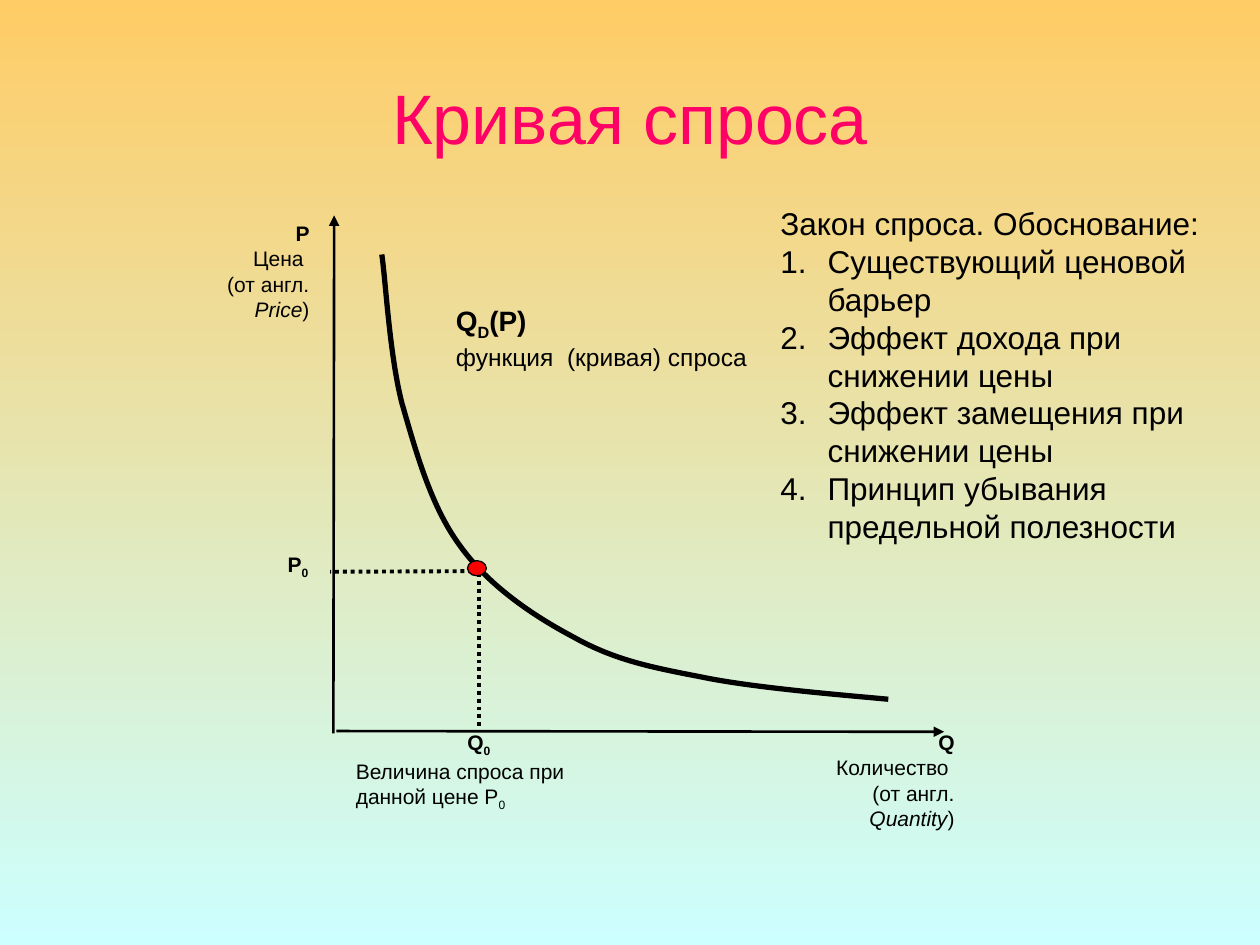
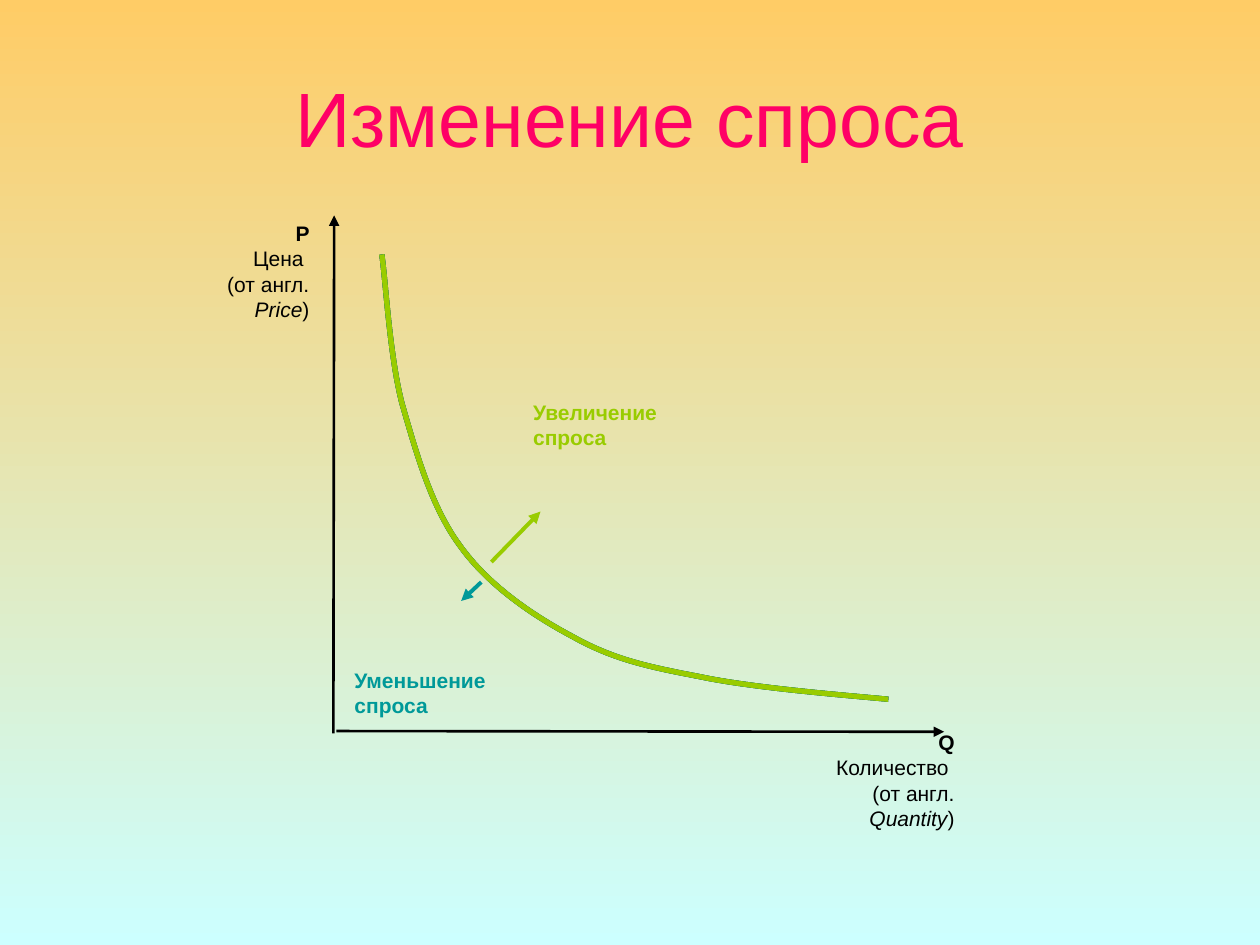
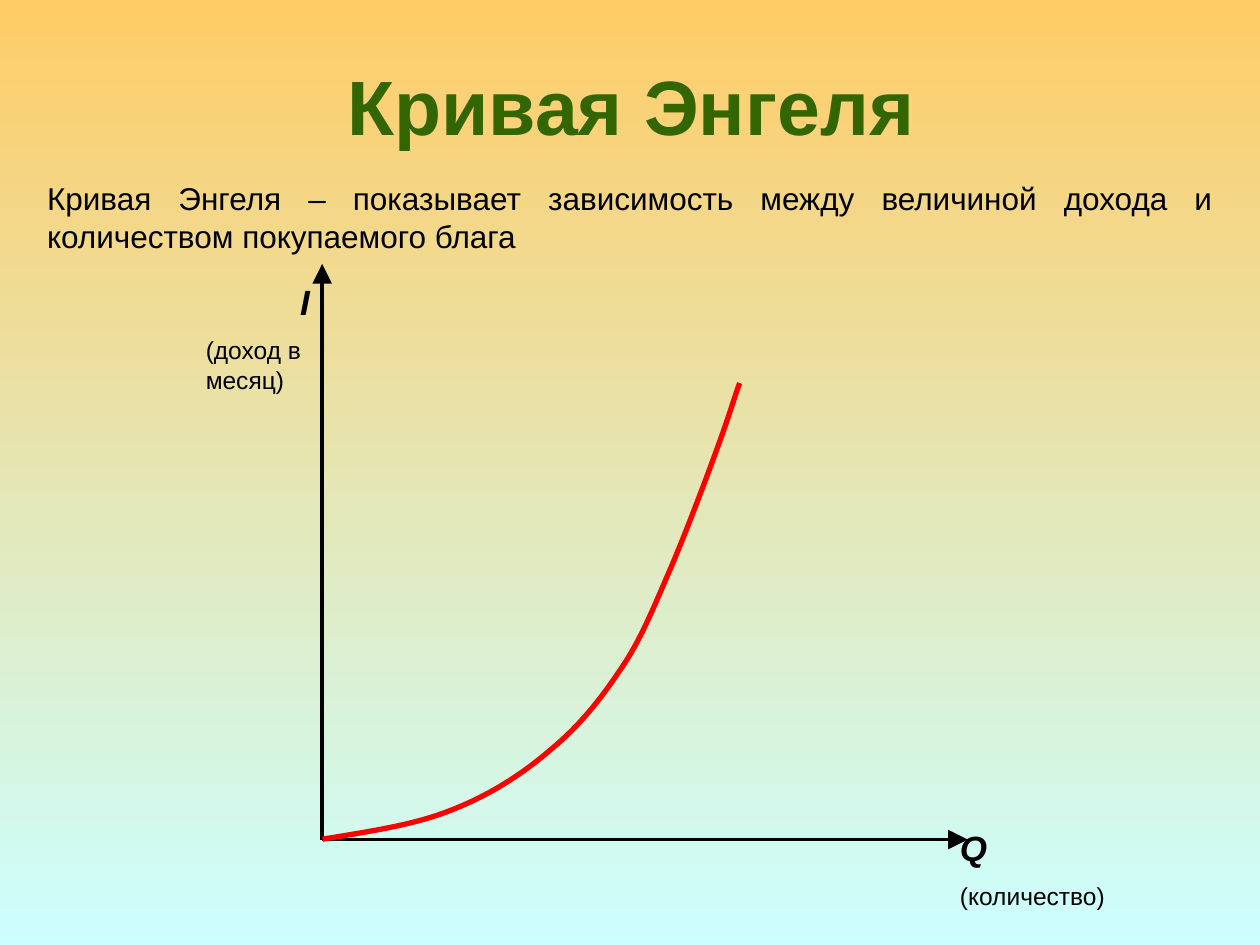
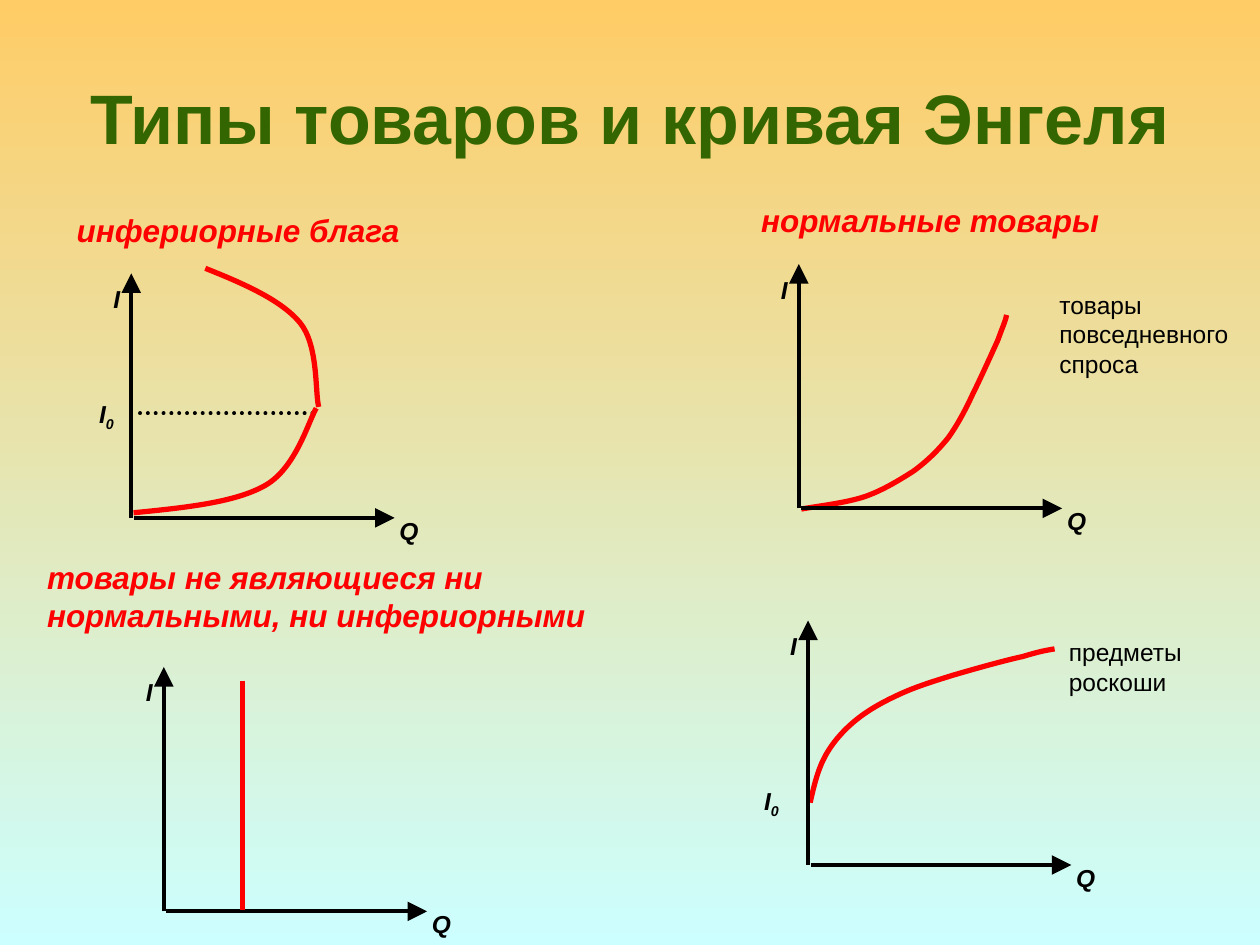
from dataclasses import dataclass
from typing import Any, NamedTuple, Optional

from lxml.etree import SubElement
from pptx import Presentation
from pptx.dml.color import RGBColor as Color
from pptx.enum.dml import MSO_LINE as Dash
from pptx.enum.shapes import MSO_CONNECTOR as Connector, MSO_SHAPE as Preset
from pptx.enum.text import MSO_ANCHOR as Anchor, MSO_AUTO_SIZE as AutoSize, PP_ALIGN as Align
from pptx.oxml.ns import qn
from pptx.util import Inches, Pt

SLIDE_WIDTH, SLIDE_HEIGHT = Inches(10), Inches(7.5)
COLUMNS, ROWS = 100, 75
COLUMN, ROW = SLIDE_WIDTH // COLUMNS, SLIDE_HEIGHT // ROWS


@dataclass(frozen=True)
class Theme:
    font: str = "Arial"
    sky: Color = Color(0xFF, 0xCC, 0x66)
    ground: Color = Color(0xCC, 0xFF, 0xFF)
    ink: Color = Color(0, 0, 0)
    pink: Color = Color(0xFF, 0x00, 0x66)
    green: Color = Color(0x33, 0x66, 0x00)
    red: Color = Color(0xFF, 0, 0)
    teal: Color = Color(0, 0x99, 0x99)
    lime: Color = Color(0x99, 0xCC, 0x00)
    large_title: int = 44
    title: int = 40
    symbol: int = 20
    body: int = 18
    function: int = 16
    note: int = 14
    label: int = 12
    hairline: float = 0.75
    thin: float = 1.5
    medium: float = 2.25
    thick: float = 3


THEME = Theme()


class Point(NamedTuple):
    column: float
    row: float


class Box(NamedTuple):
    column: float
    row: float
    width: float
    height: float


class Style(NamedTuple):
    size: int
    color: Color = THEME.ink
    bold: bool = False
    italic: bool = False


class Run(NamedTuple):
    text: str
    style: Style
    subscript: bool = False


@dataclass(frozen=True)
class TextLine:
    runs: tuple[Run, ...]
    align: Align = Align.LEFT
    before: float = 0
    numbered: bool = False


@dataclass(frozen=True)
class TextBlock:
    box: Box
    lines: tuple[TextLine, ...]
    grow: bool = True
    wrap: bool = True
    anchor: Anchor = Anchor.TOP


@dataclass(frozen=True)
class Stroke:
    width: float
    color: Color = THEME.ink
    dotted: bool = False
    arrow: Optional[str] = None
    cap: str = "flat"


@dataclass(frozen=True)
class Segment:
    start: Point
    end: Point
    stroke: Stroke


@dataclass(frozen=True)
class Curve:
    """Bezier outline: a start point, then three points for each piece."""
    points: tuple[tuple[float, float], ...]
    color: Color = THEME.red


@dataclass(frozen=True)
class Plane:
    """Small income-quantity axes; threshold places I0 relative to the origin."""
    origin: Point
    threshold: Optional[Point] = None


LABEL = Style(THEME.label)
LABEL_BOLD = Style(THEME.label, bold=True)
LABEL_ITALIC = Style(THEME.label, italic=True)
NOTE = Style(THEME.note)
BODY = Style(THEME.body)
FUNCTION = Style(THEME.function, bold=True)
SYMBOL = Style(THEME.symbol, bold=True, italic=True)
SMALL_SYMBOL = Style(THEME.note, bold=True, italic=True)
HEADING = Style(THEME.body, THEME.red, bold=True, italic=True)

MARKET_AXIS = Stroke(THEME.thin, arrow="med")
INCOME_AXIS = Stroke(THEME.medium, arrow="lg")
DOTS = Stroke(THEME.medium, dotted=True)
ROUND_DOTS = Stroke(THEME.medium, dotted=True, cap="rnd")

TITLE_BOX = Box(5, 3, 90, 12.5)
DEMAND_POINTS = (
    (30.3, 20.2), (30.6, 22.1), (30.9, 28.1), (31.9, 32), (33, 35.8), (34.2, 40.2),
    (36.5, 43.3), (38.7, 46.4), (42.2, 48.8), (45.4, 50.5), (48.6, 52.3),
    (51.3, 52.9), (55.5, 53.7), (59.7, 54.6), (67.3, 55.2), (70.5, 55.5),
)
ENGEL_POINTS = (
    (25.6, 66.6), (29.2, 66), (32.8, 65.5), (35.8, 64.3), (38.9, 63.1), (41.5, 61.4),
    (43.7, 59.5), (45.9, 57.7), (47.6, 55.6), (49.2, 53.2), (50.8, 50.9),
    (51.8, 48.4), (53.1, 45.4), (54.4, 42.4), (56.2, 37.6), (57.1, 35.1),
    (58, 32.6), (58.3, 31.5), (58.7, 30.4),
)
EVERYDAY_POINTS = (
    (63.6, 40.4), (65.4, 40.1), (67.2, 39.9), (68.7, 39.4), (70.1, 38.9), (71.4, 38.1),
    (72.5, 37.4), (73.6, 36.6), (74.5, 35.7), (75.3, 34.7), (76, 33.7), (76.6, 32.6),
    (77.2, 31.3), (77.8, 30.1), (78.7, 28.1), (79.2, 27), (79.6, 25.9),
    (79.8, 25.5), (79.9, 25),
)
LUXURY_POINTS = (
    (64.3, 63.7), (64.6, 62.4), (64.9, 61.1), (65.5, 60), (66.1, 58.9), (67, 57.9),
    (68, 57.1), (69, 56.3), (70.1, 55.7), (71.4, 55.1), (72.7, 54.5), (74, 54.1),
    (75.6, 53.6), (77.3, 53.1), (79.8, 52.4), (81.2, 52.1), (82.5, 51.7),
    (83.1, 51.6), (83.7, 51.5),
)
INFERIOR_LOWER_POINTS = (
    (10.6, 40.7), (14.6, 40.3), (18.7, 39.9), (21.1, 38.5),
    (23.5, 37.1), (24.5, 33.4), (25.1, 32.4),
)
INFERIOR_UPPER_POINTS = (
    (16.3, 21.3), (19.3, 22.5), (22.3, 23.8), (23.8, 25.6),
    (25.3, 27.4), (25, 31.2), (25.3, 32.3),
)


def x(columns: float) -> int:
    return round(columns * COLUMN)


def y(rows: float) -> int:
    return round(rows * ROW)


def line(text: str, style: Style, **options: Any) -> TextLine:
    return TextLine((Run(text, style),), **options)


def indexed(symbol: str, index: str, style: Style, **options: Any) -> TextLine:
    """A symbol followed by its subscript."""
    return TextLine((Run(symbol, style), Run(index, style, True)), **options)


def apply_format(target: Any, values: dict[str, Any]) -> None:
    for name, value in values.items():
        setattr(target, name, value)


def add_run(paragraph: Any, run: Run) -> None:
    text_run = paragraph.add_run()
    text_run.text = run.text
    apply_format(text_run.font, {
        "name": THEME.font,
        "size": Pt(run.style.size),
        "bold": run.style.bold,
        "italic": run.style.italic,
    })
    text_run.font.color.rgb = run.style.color
    if run.subscript:
        text_run._r.get_or_add_rPr().set("baseline", "-25000")


def add_number(paragraph: Any) -> None:
    properties = paragraph._p.get_or_add_pPr()
    indent = x(3.75)
    properties.set("marL", str(indent))
    properties.set("indent", str(-indent))
    SubElement(properties, qn("a:buFont"), typeface=THEME.font)
    SubElement(properties, qn("a:buAutoNum"), type="arabicPeriod")


def draw_text(shapes: Any, block: TextBlock) -> None:
    box = block.box
    shape = shapes.add_textbox(x(box.column), y(box.row), x(box.width), y(box.height))
    frame = shape.text_frame
    apply_format(frame, {
        "word_wrap": block.wrap,
        "auto_size": AutoSize.SHAPE_TO_FIT_TEXT if block.grow else AutoSize.NONE,
        "vertical_anchor": block.anchor,
    })
    for number, text_line in enumerate(block.lines):
        paragraph = frame.add_paragraph() if number else frame.paragraphs[0]
        apply_format(paragraph, {
            "alignment": text_line.align,
            "space_before": Pt(text_line.before),
        })
        if text_line.numbered:
            add_number(paragraph)
        for run in text_line.runs:
            add_run(paragraph, run)


def draw_segment(shapes: Any, segment: Segment) -> None:
    start, end, stroke = segment.start, segment.end, segment.stroke
    connector = shapes.add_connector(
        Connector.STRAIGHT, x(start.column), y(start.row), x(end.column), y(end.row))
    connector.line.color.rgb = stroke.color
    connector.line.width = Pt(stroke.width)
    outline = connector.line._get_or_add_ln()
    if stroke.dotted:
        connector.line.dash_style = Dash.ROUND_DOT
        outline.set("cap", stroke.cap)
    if stroke.arrow:
        SubElement(outline, qn("a:tailEnd"),
                   type="triangle", w=stroke.arrow, len=stroke.arrow)
    SubElement(connector._element.spPr, qn("a:effectLst"))


def bend(shape: Any) -> None:
    """Turn each three straight pieces of a freeform into one Bezier piece."""
    outline = next(shape._element.iter(qn("a:path")))
    straights = outline.findall(qn("a:lnTo"))
    for first in range(0, len(straights), 3):
        piece = SubElement(outline, qn("a:cubicBezTo"))
        for straight in straights[first:first + 3]:
            piece.append(straight[0])
            outline.remove(straight)


def draw_curve(shapes: Any, curve: Curve) -> None:
    start, *others = [(x(column), y(row)) for column, row in curve.points]
    builder = shapes.build_freeform(*start)
    builder.add_line_segments(others, close=False)
    shape = builder.convert_to_shape()
    bend(shape)
    shape.shadow.inherit = False
    shape.fill.background()
    shape.line.color.rgb = curve.color
    shape.line.width = Pt(THEME.thick)


def draw_dot(shapes: Any, box: Box) -> None:
    dot = shapes.add_shape(Preset.OVAL, x(box.column), y(box.row), x(box.width), y(box.height))
    dot.shadow.inherit = False
    dot.fill.solid()
    dot.fill.fore_color.rgb = THEME.red
    dot.line.color.rgb = THEME.ink
    dot.line.width = Pt(THEME.hairline)


DRAWERS = {TextBlock: draw_text, Segment: draw_segment, Curve: draw_curve}


def draw_all(shapes: Any, *elements: Any) -> None:
    for element in elements:
        DRAWERS[type(element)](shapes, element)


def new_slide(presentation: Any, title: str, style: Style, box: Box = TITLE_BOX) -> Any:
    slide = presentation.slides.add_slide(presentation.slide_layouts[6])
    fill = slide.background.fill
    fill.gradient()
    fill.gradient_angle = 270
    for stop, color in zip(fill.gradient_stops, (THEME.sky, THEME.ground)):
        stop.color.rgb = color
    draw_text(slide.shapes, TextBlock(
        box, (line(title, style, align=Align.CENTER),), grow=False, anchor=Anchor.MIDDLE))
    return slide


def axis_label(box: Box, symbol: str, name: str, english: str) -> TextBlock:
    return TextBlock(box, (
        line(symbol, LABEL_BOLD, align=Align.RIGHT),
        line(name, LABEL, align=Align.RIGHT),
        line("(от англ.", LABEL, align=Align.RIGHT),
        TextLine((Run(english, LABEL_ITALIC), Run(")", LABEL)), Align.RIGHT),
    ), grow=False)


def draw_market(shapes: Any, *curve_colors: Color) -> None:
    """Price-quantity axes with the demand curve in each colour, last on top."""
    first, *others = (Curve(DEMAND_POINTS, color) for color in curve_colors)
    draw_all(
        shapes,
        Segment(Point(26.46, 58.2), Point(26.52, 17.1), MARKET_AXIS),
        Segment(Point(26.7, 58.02), Point(74.93, 58.08), MARKET_AXIS),
        first,
        axis_label(Box(15.3, 17.03, 10.25, 11.7), "P", "Цена ", "Price"),
        axis_label(Box(60.7, 57.43, 16.05, 10.2), "Q", "Количество ", "Quantity"),
        *others,
    )


def draw_plane(shapes: Any, plane: Plane) -> None:
    column, row = plane.origin
    group = shapes.add_group_shape().shapes
    draw_all(
        group,
        Segment(plane.origin, Point(column, row - 19.4), INCOME_AXIS),
        Segment(Point(column + 0.2, row), Point(column + 20.9, row), INCOME_AXIS),
        TextBlock(Box(column - 4, row - 19.05, 4.1, 3.3),
                  (line("I", SMALL_SYMBOL, align=Align.RIGHT),)),
        TextBlock(Box(column + 20.3, row - 0.65, 6.5, 3.3), (line("Q", SMALL_SYMBOL),)),
    )
    if plane.threshold:
        shift = plane.threshold
        draw_text(group, TextBlock(
            Box(column + shift.column, row + shift.row, 4.1, 3.3),
            (indexed("I", "0", SMALL_SYMBOL, align=Align.RIGHT),)))


def build_demand_curve(presentation: Any) -> None:
    shapes = new_slide(presentation, "Кривая спроса", Style(THEME.title, THEME.pink)).shapes
    reasons = (
        "Существующий ценовой барьер",
        "Эффект дохода при снижении цены",
        "Эффект замещения при снижении цены",
        "Принцип убывания предельной полезности",
    )
    draw_market(shapes, THEME.ink)
    draw_all(
        shapes,
        Segment(Point(38, 45.5), Point(38, 57.8), DOTS),
        Segment(Point(38.1, 45.33), Point(26.2, 45.38), DOTS),
        TextBlock(Box(27.25, 57.4, 21.5, 10.8), (
            indexed("Q", "0", LABEL_BOLD, align=Align.CENTER),
            indexed("Величина спроса при данной цене P", "0", LABEL),
        ), grow=False),
        TextBlock(Box(19.6, 43.25, 8.1, 4.1),
                  (indexed("P", "0", LABEL_BOLD, align=Align.CENTER),), grow=False),
    )
    draw_dot(shapes, Box(37.1, 44.5, 1.5, 1.2))
    draw_all(
        shapes,
        TextBlock(Box(35.2, 23.6, 26, 6.1), (
            TextLine((Run("Q", FUNCTION), Run("D", FUNCTION, True), Run("(P)", FUNCTION))),
            line("функция  (кривая) спроса", NOTE),
        ), grow=False),
        TextBlock(Box(60.95, 15.73, 36, 28.3), (
            line("Закон спроса. Обоснование:", BODY),
            *(line(reason, BODY, numbered=True) for reason in reasons),
        )),
    )


def build_demand_change(presentation: Any) -> None:
    shapes = new_slide(
        presentation, "Изменение спроса", Style(THEME.large_title, THEME.pink)).shapes
    draw_market(shapes, THEME.ink, THEME.teal, THEME.lime)
    changes = (
        ("Увеличение спроса", THEME.lime, Point(39, 44.6), Point(42.9, 40.6), Point(41.33, 31.2)),
        ("Уменьшение спроса", THEME.teal, Point(38.2, 46.2), Point(36.6, 47.7), Point(27.15, 52.5)),
    )
    for text, color, start, end, corner in changes:
        draw_all(
            shapes,
            Segment(start, end, Stroke(THEME.medium, color, arrow="med")),
            TextBlock(Box(*corner, 12.6, 5), (line(text, Style(THEME.label, color, True)),)),
        )


def build_engel_curve(presentation: Any) -> None:
    shapes = new_slide(presentation, "Кривая Энгеля",
                       Style(THEME.large_title, THEME.green, True),
                       Box(5.1, 2.05, 90, 12.5)).shapes
    origin = Point(25.57, 66.63)
    draw_all(
        shapes.add_group_shape().shapes,
        Segment(origin, Point(origin.column, 20.95), INCOME_AXIS),
        Segment(origin, Point(76.8, origin.row), INCOME_AXIS),
        TextBlock(Box(15.35, 21.8, 10.23, 10.2), (
            line("I", SYMBOL, align=Align.RIGHT),
            line("(доход в месяц)", NOTE, before=7),
        )),
        TextBlock(Box(75.2, 65.1, 14.2, 7.8), (
            line("Q", SYMBOL),
            line("(количество)", NOTE, before=7),
        )),
        Curve(ENGEL_POINTS),
    )
    draw_text(shapes, TextBlock(Box(2.75, 13.7, 94.5, 7), (
        line("Кривая Энгеля – показывает зависимость между величиной дохода "
             "и количеством покупаемого блага ", BODY, align=Align.JUSTIFY),
    ), anchor=Anchor.MIDDLE))


def build_goods_types(presentation: Any) -> None:
    shapes = new_slide(presentation, "Типы товаров и кривая Энгеля",
                       Style(THEME.title, THEME.green, True)).shapes
    headings = (
        ("инфериорные блага", Box(5.1, 16.25, 27.7, 4), False),
        ("нормальные товары", Box(59.43, 15.5, 28.9, 4), False),
        ("товары не являющиеся ни нормальными, ни инфериорными",
         Box(2.75, 43.8, 45.7, 7), True),
    )
    notes = (
        ("товары повседневного спроса", Box(83.1, 22.53, 15.7, 8)),
        ("предметы роскоши", Box(83.85, 50.1, 15.7, 5.7)),
    )
    planes = (
        Plane(Point(63.4, 40.35)),
        Plane(Point(10.42, 41.1), Point(-4.5, -9.9)),
        Plane(Point(64.13, 68.65), Point(-5.43, -6.75)),
        Plane(Point(13, 72.33)),
    )
    for text, box, wrap in headings:
        draw_text(shapes, TextBlock(box, (line(text, HEADING),), wrap=wrap))
    draw_all(shapes, *(Curve(points) for points in (EVERYDAY_POINTS, LUXURY_POINTS)))
    for text, box in notes:
        draw_text(shapes, TextBlock(box, (line(text, NOTE),)))
    draw_segment(shapes, Segment(Point(24.8, 32.8), Point(10.6, 32.8), ROUND_DOTS))
    for plane in planes:
        draw_plane(shapes, plane)
    draw_all(
        shapes,
        Segment(Point(19.27, 54.03), Point(19.27, 72.2), Stroke(THEME.thick, THEME.red)),
        *(Curve(points) for points in (INFERIOR_LOWER_POINTS, INFERIOR_UPPER_POINTS)),
    )


def main() -> None:
    presentation = Presentation()
    apply_format(presentation, {"slide_width": SLIDE_WIDTH, "slide_height": SLIDE_HEIGHT})
    for build in (build_demand_curve, build_demand_change, build_engel_curve, build_goods_types):
        build(presentation)
    presentation.save("out.pptx")


if __name__ == "__main__":
    main()
